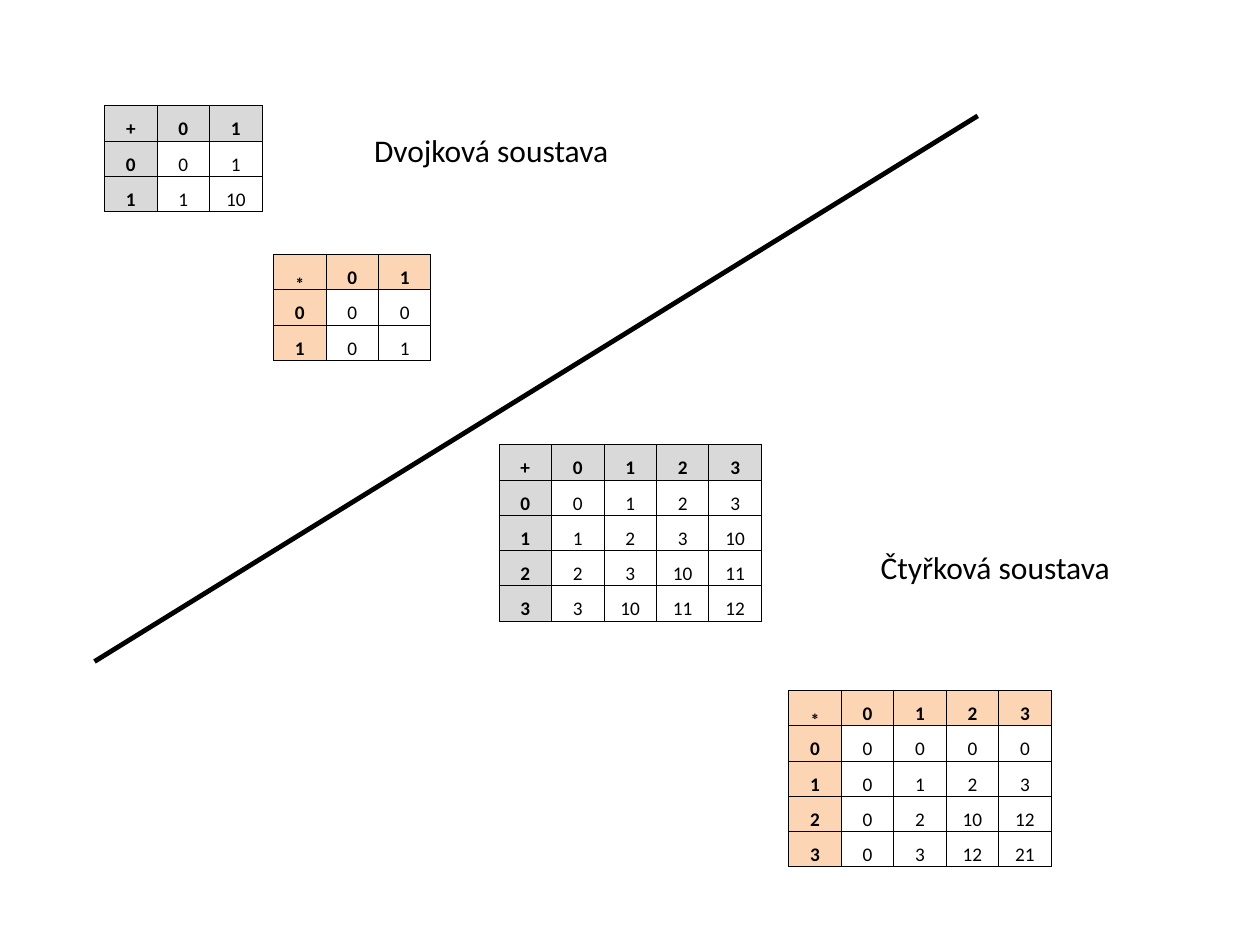
from dataclasses import dataclass

from lxml import etree
from pptx import Presentation
from pptx.dml.color import RGBColor
from pptx.enum.shapes import MSO_CONNECTOR
from pptx.enum.text import MSO_ANCHOR, MSO_AUTO_SIZE, PP_ALIGN
from pptx.oxml.ns import qn
from pptx.util import Inches, Pt

STRAIGHT = MSO_CONNECTOR.STRAIGHT
BOTTOM = MSO_ANCHOR.BOTTOM
CENTER = PP_ALIGN.CENTER
FIT_TEXT = MSO_AUTO_SIZE.SHAPE_TO_FIT_TEXT
BLANK_LAYOUT = 6


@dataclass(frozen=True)
class Theme:
    ink: str = "000000"
    sum_fill: str = "D9D9D9"
    product_fill: str = "FCD5B4"
    font: str = "Calibri"
    symbol_font: str = "Arial"
    label_size: float = 18
    cell_size: float = 11
    border_width: float = 0.5
    divider_width: float = 2.75


def to_base(number, base):
    """Write a non-negative number in the given base."""
    if number < base:
        return str(number)
    return to_base(number // base, base) + str(number % base)


class SlideBuilder:
    def __init__(self, slide, theme):
        self.slide = slide
        self.theme = theme

    def add_run(self, para, text, size, bold=False, font_name=None):
        span = para.add_run()
        span.text = text
        font = span.font
        font.name = font_name or self.theme.font
        font.size = Pt(size)
        font.bold = bold
        font.color.rgb = RGBColor.from_string(self.theme.ink)

    def label(self, text, left, top, width, height=0.4):
        box = self.slide.shapes.add_textbox(
            Inches(left), Inches(top), Inches(width), Inches(height))
        frame = box.text_frame
        frame.word_wrap = False
        frame.auto_size = FIT_TEXT
        self.add_run(frame.paragraphs[0], text, self.theme.label_size)

    def divider(self, start, end):
        line = self.slide.shapes.add_connector(
            STRAIGHT, *(Inches(value) for value in start + end))
        line.line.color.rgb = RGBColor.from_string(self.theme.ink)
        line.line.width = Pt(self.theme.divider_width)
        properties = line._element.spPr
        etree.SubElement(properties, qn("a:effectLst"))

    def border(self, cell):
        properties = cell._tc.get_or_add_tcPr()
        for side in ("a:lnL", "a:lnR", "a:lnT", "a:lnB"):
            edge = etree.SubElement(properties, qn(side))
            edge.set("w", str(Pt(self.theme.border_width)))
            fill = etree.SubElement(edge, qn("a:solidFill"))
            etree.SubElement(fill, qn("a:srgbClr")).set("val", self.theme.ink)

    def cell(self, cell, text, fill=None, font_name=None):
        cell.margin_left = cell.margin_right = cell.margin_top = Inches(0.01)
        cell.margin_bottom = 0
        cell.vertical_anchor = BOTTOM
        self.border(cell)
        if fill:
            cell.fill.solid()
            cell.fill.fore_color.rgb = RGBColor.from_string(fill)
        else:
            cell.fill.background()
        para = cell.text_frame.paragraphs[0]
        para.alignment = CENTER
        self.add_run(para, text, self.theme.cell_size, bool(fill), font_name)

    def operation_table(self, left, top, base, symbol, operation, fill,
                        symbol_font=None):
        count = base + 1
        column_width, row_height = Inches(1.25) // 3, Inches(0.28)
        table = self.slide.shapes.add_table(
            count, count, Inches(left), Inches(top),
            column_width * count, row_height * count).table
        table.first_row = table.horz_banding = False
        for column in table.columns:
            column.width = column_width
        for row in table.rows:
            row.height = row_height

        # Header corner, then both header strips, then the results
        self.cell(table.cell(0, 0), symbol, fill, symbol_font)
        for first in range(base):
            self.cell(table.cell(0, first + 1), str(first), fill)
            self.cell(table.cell(first + 1, 0), str(first), fill)
            for second in range(base):
                result = to_base(operation(first, second), base)
                self.cell(table.cell(first + 1, second + 1), result)

    def sum_table(self, left, top, base):
        self.operation_table(left, top, base, "+", lambda a, b: a + b,
                             self.theme.sum_fill)

    def product_table(self, left, top, base):
        self.operation_table(left, top, base, "∗", lambda a, b: a * b,
                             self.theme.product_fill, self.theme.symbol_font)


def main():
    deck = Presentation()
    deck.slide_width, deck.slide_height = Inches(10), Inches(7.5)
    page = deck.slides.add_slide(deck.slide_layouts[BLANK_LAYOUT])
    builder = SlideBuilder(page, Theme())

    # Binary system
    builder.sum_table(0.83, 0.84, base=2)
    builder.product_table(2.17, 2.02, base=2)
    builder.label("Dvojková soustava", 2.87, 0.99, 2.08)

    # Diagonal between the two systems
    builder.divider((7.76, 0.92), (0.75, 5.25))

    # Quaternary system
    builder.sum_table(3.96, 3.53, base=4)
    builder.product_table(6.26, 5.48, base=4)
    builder.label("Čtyřková soustava", 6.89, 4.3, 2.04)

    deck.save("out.pptx")


if __name__ == "__main__":
    main()
